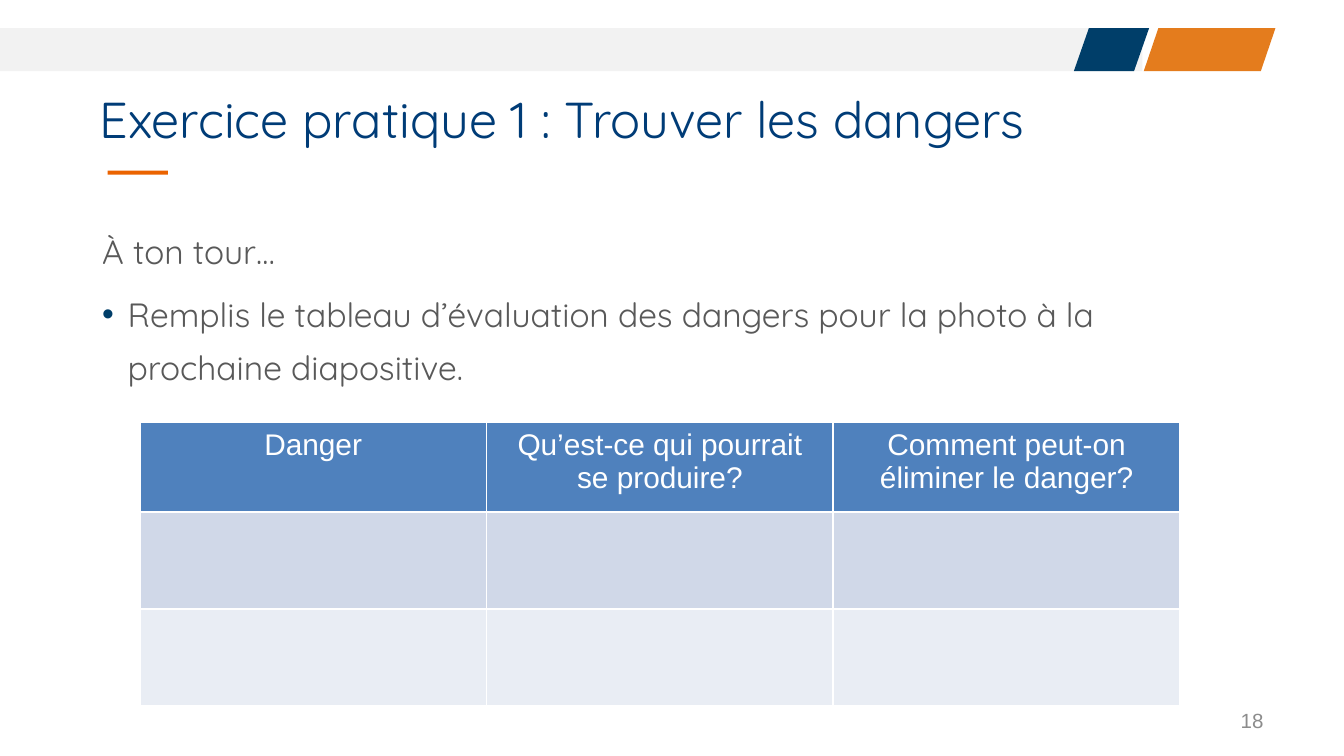
from lxml.etree import SubElement
from pptx import Presentation
from pptx.dml.color import RGBColor
from pptx.enum.shapes import MSO_SHAPE as Shape
from pptx.enum.text import MSO_ANCHOR as Anchor, MSO_AUTO_SIZE as AutoSize, PP_ALIGN as Align
from pptx.oxml import parse_xml
from pptx.oxml.ns import nsdecls, qn
from pptx.util import Inches, Pt

# Content
TITLE = "Exercice pratique 1 : Trouver les dangers"
INTRO = "À ton tour…"
TASK = "Remplis le tableau d’évaluation des dangers pour la photo à la prochaine diapositive."
HEADERS = ["Danger", "Qu’est-ce qui pourrait se produire?", "Comment peut-on éliminer le danger?"]
PAGE_NUMBER = "18"

# Colours
WHITE = RGBColor(0xFF, 0xFF, 0xFF)
LIGHT_GREY = RGBColor(0xF2, 0xF2, 0xF2)
TEXT_GREY = RGBColor(0x59, 0x59, 0x59)
NUMBER_GREY = RGBColor(0x8C, 0x8C, 0x8C)
NAVY = RGBColor(0x00, 0x3E, 0x69)
TITLE_BLUE = RGBColor(0x00, 0x3C, 0x77)
ORANGE = RGBColor(0xE4, 0x7C, 0x1D)
RULE_ORANGE = RGBColor(0xEB, 0x63, 0x00)
HEADER_BLUE = RGBColor(0x4F, 0x81, 0xBD)
ROW_COLOURS = [HEADER_BLUE, RGBColor(0xD0, 0xD8, 0xE8), RGBColor(0xE9, 0xED, 0xF4)]

# Layout, in inches
BAND_TOP, BAND_HEIGHT = 0.21, 0.32
DECORATIONS = [  # preset, left, top, width, height, colour, slant
    (Shape.RECTANGLE, 0, BAND_TOP, 8.5, BAND_HEIGHT, LIGHT_GREY, None),
    (Shape.PARALLELOGRAM, 8.51, BAND_TOP, 0.98, BAND_HEIGHT, ORANGE, 0.34),
    (Shape.PARALLELOGRAM, 7.99, BAND_TOP, 0.56, BAND_HEIGHT, NAVY, 0.35),
    (Shape.RECTANGLE, 0.8, 1.27, 0.45, 0.03, RULE_ORANGE, None),
]
TABLE_BOX = (1.04, 3.14, 7.74, 2.11)
ROW_HEIGHTS = [0.67, 0.72, 0.72]


def place(part, left, top, width, height):
    part.left, part.top = Inches(left), Inches(top)
    part.width, part.height = Inches(width), Inches(height)


def style(paragraph, size, colour, font, align=Align.LEFT):
    paragraph.alignment = align
    for run in paragraph.runs:
        run.font.size, run.font.name, run.font.bold = Pt(size), font, False
        run.font.color.rgb = colour


def set_frame(frame, anchor, auto_size):
    frame.word_wrap, frame.vertical_anchor, frame.auto_size = True, anchor, auto_size
    frame.margin_left = frame.margin_right = Inches(0.07)
    frame.margin_top = frame.margin_bottom = Inches(0.04)


def set_bullet(paragraph, indent, char=None, colour=None):
    props = paragraph._p.get_or_add_pPr()
    props.set("marL", str(Inches(indent)))
    props.set("indent", str(-Inches(indent)))
    if char:
        SubElement(SubElement(props, qn("a:buClr")), qn("a:srgbClr")).set("val", str(colour))
        SubElement(props, qn("a:buFont")).set("typeface", "Arial")
        SubElement(props, qn("a:buChar")).set("char", char)
    else:
        SubElement(props, qn("a:buNone"))


def set_borders(cell, colour, width):
    props = cell._tc.get_or_add_tcPr()
    for index, side in enumerate("LRTB"):
        props.insert(index, parse_xml(
            f'<a:ln{side} {nsdecls("a")} w="{Pt(width)}"><a:solidFill>'
            f'<a:srgbClr val="{colour}"/></a:solidFill></a:ln{side}>'))


# A 16:9 slide, ten inches wide
prs = Presentation()
prs.slide_width = Inches(10)
prs.slide_height = Inches(10) * 9 // 16
slide = prs.slides.add_slide(prs.slide_layouts[1])

# Top band and title rule
for preset, left, top, width, height, colour, slant in DECORATIONS:
    decoration = slide.shapes.add_shape(preset, 0, 0, 0, 0)
    place(decoration, left, top, width, height)
    decoration.shadow.inherit = False
    decoration.fill.solid()
    decoration.fill.fore_color.rgb = colour
    decoration.line.fill.background()
    if slant:
        decoration.adjustments[0] = slant

# Title
title = slide.shapes.title
place(title, 0.67, 0.22, 8.66, 0.93)
set_frame(title.text_frame, Anchor.BOTTOM, AutoSize.NONE)
title.text_frame.text = TITLE
title.text_frame.paragraphs[0].line_spacing = 0.9
style(title.text_frame.paragraphs[0], 27, TITLE_BLUE, "Quicksand")

# Instructions
body = slide.placeholders[1]
place(body, 0.69, 1.59, 8.66, 1.3)
set_frame(body.text_frame, Anchor.TOP, AutoSize.SHAPE_TO_FIT_TEXT)
body.text_frame.text = f"{INTRO}\n{TASK}"
intro, task = body.text_frame.paragraphs
for paragraph, before, after in [(intro, 0, 0), (task, 5.6, 18)]:
    paragraph.line_spacing = 1.3
    paragraph.space_before, paragraph.space_after = Pt(before), Pt(after)
    style(paragraph, 18, TEXT_GREY, "Quicksand")
set_bullet(intro, 0)
set_bullet(task, 0.19, "•", NAVY)

# Page number
number = slide.shapes.add_textbox(0, 0, 0, 0)
place(number, 7.17, 5.21, 2.33, 0.3)
number.text_frame.word_wrap = True
number.text_frame.vertical_anchor = Anchor.MIDDLE
number.text_frame.text = PAGE_NUMBER
style(number.text_frame.paragraphs[0], 11, NUMBER_GREY, "Arial", Align.RIGHT)

# Hazard table
hazards = slide.shapes.add_table(len(ROW_HEIGHTS), len(HEADERS), *map(Inches, TABLE_BOX)).table
for row, height in zip(hazards.rows, ROW_HEIGHTS):
    row.height = Inches(height)
for row, colour in zip(hazards.rows, ROW_COLOURS):
    for cell in row.cells:
        cell.fill.solid()
        cell.fill.fore_color.rgb = colour
        set_borders(cell, WHITE, 1)
for cell, header in zip(hazards.rows[0].cells, HEADERS):
    cell.text_frame.text = header
    style(cell.text_frame.paragraphs[0], 16, WHITE, "Arial", Align.CENTER)

prs.save("out.pptx")
